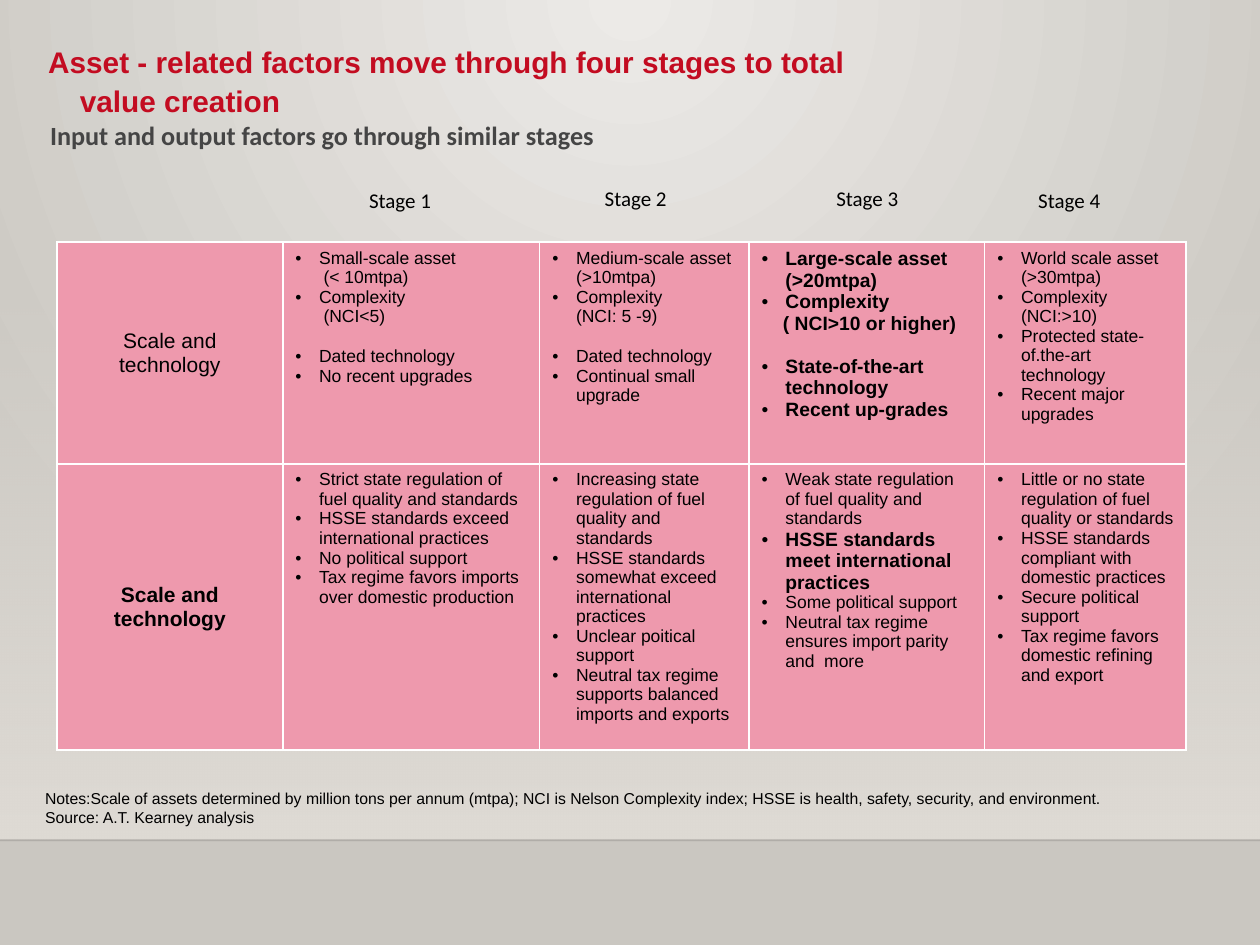
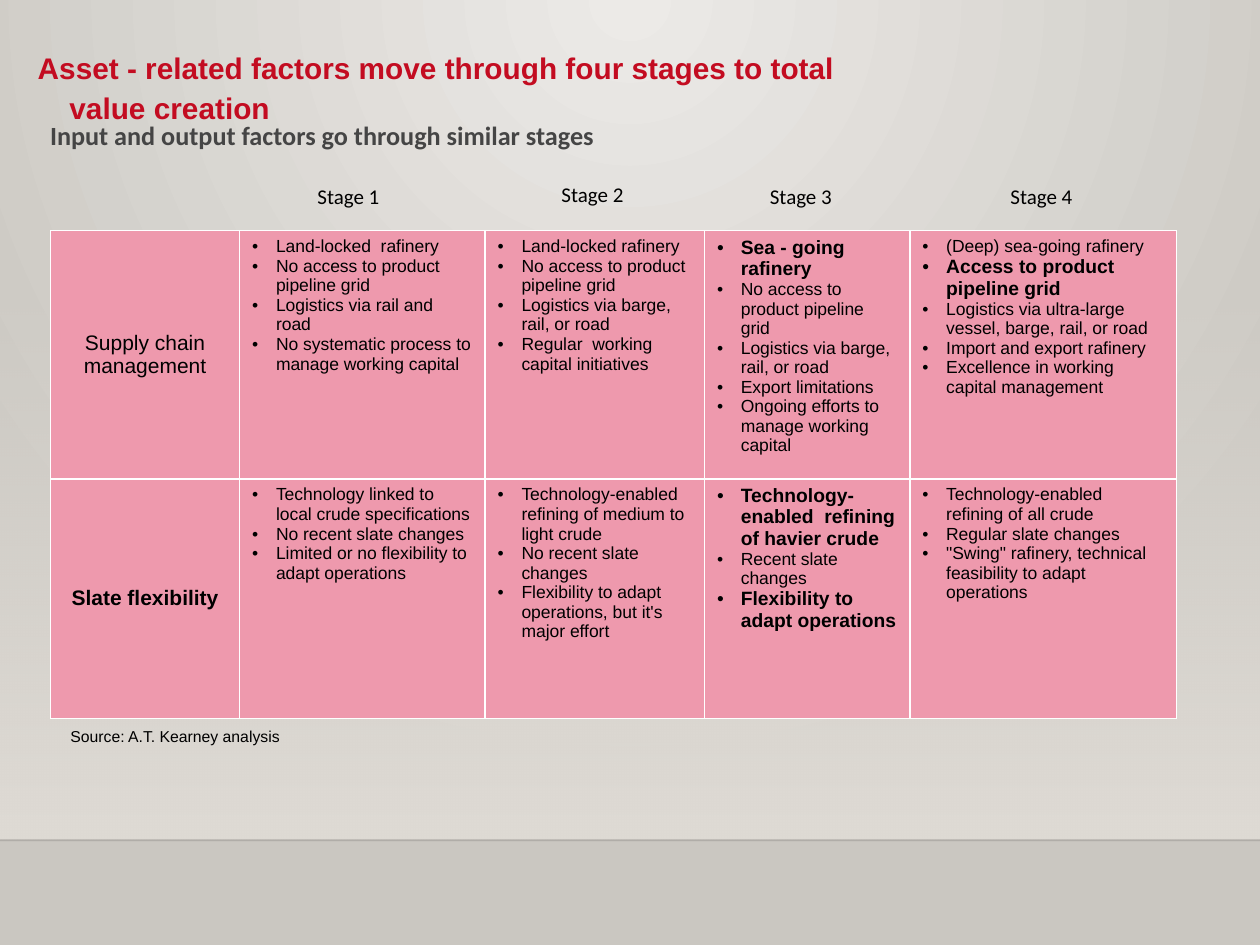
from dataclasses import dataclass

from lxml.etree import SubElement
from pptx import Presentation
from pptx.dml.color import RGBColor
from pptx.enum.shapes import MSO_CONNECTOR, MSO_SHAPE
from pptx.enum.text import MSO_ANCHOR as Anchor, MSO_AUTO_SIZE as AutoSize, PP_ALIGN as Align
from pptx.oxml.ns import qn
from pptx.util import Cm, Pt

BLACK = RGBColor(0x00, 0x00, 0x00)
WHITE = RGBColor(0xFF, 0xFF, 0xFF)
RED = RGBColor(0xC3, 0x0C, 0x21)
GREY = RGBColor(0x45, 0x45, 0x45)
PINK = RGBColor(0xEE, 0x99, 0xAD)
GLOW = RGBColor(0xEC, 0xEA, 0xE7)
EDGE = RGBColor(0xCA, 0xC7, 0xC1)
BAND = RGBColor(0xDF, 0xDB, 0xD5)

BULLET_INDENT = 0.48
FLOOR_TOP = 16.94
TITLE_ONLY_LAYOUT = 5


@dataclass
class Point:
    """A cell line; one with its own indent (cm) carries no bullet."""
    text: str
    bold: bool = False
    indent: float = 0
    gap: float = 0


def strong(text, **options):
    return Point(text, bold=True, **options)


TITLE = "Asset - related factors move through four stages to total value creation"
SUBTITLE = "Input and output factors go through similar stages"
SOURCE = "Source: A.T. Kearney analysis"

SLIDES = [
    {
        "title_box": (0.97, 0.81, 16.94, 1.57),
        "stages": [(7.19, 3.66), (11.94, 3.61), (16.61, 3.61), (20.68, 3.66)],
        "table_at": (1.15, 4.88),
        "columns": (4.55, 5.18, 4.22, 4.75, 4.06),
        "row_heights": (4.47, 5.77),
        "rows": [
            ("Scale and technology", [
                ["Small-scale asset", Point("(< 10mtpa)", indent=0.57),
                 "Complexity", Point("(NCI<5)", indent=0.57),
                 Point("Dated technology", gap=11.5), "No recent upgrades"],
                ["Medium-scale asset (>10mtpa)",
                 "Complexity", Point("(NCI: 5 -9)", indent=0.48),
                 Point("Dated technology", gap=11.5), "Continual small upgrade"],
                [strong("Large-scale asset (>20mtpa)"),
                 strong("Complexity"), strong("( NCI>10 or higher)", indent=0.43),
                 strong("State-of-the-art technology", gap=12.5),
                 strong("Recent up-grades")],
                ["World scale asset (>30mtpa)", "Complexity (NCI:>10)",
                 "Protected state-of.the-art technology", "Recent major upgrades"],
            ]),
            ("Scale and technology", [
                ["Strict state regulation of fuel quality and standards",
                 "HSSE standards exceed international practices",
                 "No political support",
                 "Tax regime favors imports over domestic production"],
                ["Increasing state regulation of fuel quality and standards",
                 "HSSE standards somewhat exceed international practices",
                 "Unclear poitical support",
                 "Neutral tax regime supports balanced imports and exports"],
                ["Weak state regulation of fuel quality and standards",
                 strong("HSSE standards meet international practices"),
                 "Some political support",
                 "Neutral tax regime ensures import parity and  more"],
                ["Little or no state regulation of fuel quality or standards",
                 "HSSE standards compliant with domestic practices",
                 "Secure political support",
                 "Tax regime favors domestic refining and export"],
            ]),
        ],
        "notes_box": (0.66, 15.77, 23.75, 1.02),
        "notes": [
            "Notes:Scale of assets determined by million tons per annum (mtpa); NCI is Nelson "
            "Complexity index; HSSE is health, safety, security, and environment.",
            SOURCE,
        ],
    },
    {
        "title_box": (0.76, 0.94, 17.15, 1.57),
        "stages": [(6.15, 3.56), (11.07, 3.53), (15.27, 3.56), (20.12, 3.56)],
        "table_at": (1.02, 4.65),
        "columns": (3.81, 4.95, 4.42, 4.14, 5.38),
        "row_heights": (4.98, 4.83),
        "rows": [
            ("Supply chain management", [
                ["Land-locked  rafinery", "No access to product pipeline grid",
                 "Logistics via rail and road",
                 "No systematic process to manage working capital"],
                ["Land-locked rafinery", "No access to product pipeline grid",
                 "Logistics via barge, rail, or road",
                 "Regular  working capital initiatives"],
                [strong("Sea - going rafinery"), "No access to product pipeline grid",
                 "Logistics via barge, rail, or road", "Export limitations",
                 "Ongoing efforts to manage working capital"],
                ["(Deep) sea-going rafinery", strong("Access to product pipeline grid"),
                 "Logistics via ultra-large vessel, barge, rail, or road",
                 "Import and export rafinery",
                 "Excellence in working capital management"],
            ]),
            ("Slate flexibility", [
                ["Technology linked to local crude specifications",
                 "No recent slate changes",
                 "Limited or no flexibility to adapt operations"],
                ["Technology-enabled refining of medium to light crude",
                 "No recent slate changes",
                 "Flexibility to adapt operations, but it's major effort"],
                [strong("Technology-enabled  refining of havier crude"),
                 "Recent slate changes",
                 strong("Flexibility to adapt operations")],
                ["Technology-enabled  refining of all crude",
                 "Regular slate changes",
                 "\"Swing\" rafinery, technical feasibility to adapt operations"],
            ]),
        ],
        "notes_box": (1.17, 14.53, 6.32, 0.64),
        "notes": [SOURCE],
    },
]


def lengths(values):
    return [Cm(value) for value in values]


def set_font(paragraph, size, color=BLACK, name="Arial", bold=False):
    for run in paragraph.runs:
        font = run.font
        font.name, font.size, font.bold = name, Pt(size), bold
        font.color.rgb = color


def set_indent(paragraph, left, hanging=0):
    properties = paragraph._p.get_or_add_pPr()
    properties.set("marL", str(Cm(left)))
    properties.set("indent", str(-Cm(hanging)))
    return properties


def set_gradient(fill, *colors):
    fill.gradient()
    for stop, color in zip(fill.gradient_stops, colors):
        stop.color.rgb = color


def set_alpha(element, percent):
    color = next(element.iter(qn("a:srgbClr")))
    SubElement(color, qn("a:alpha"), val=str(percent * 1000))


def decorate_master(presentation, slide):
    """Give the master its round glow, fading band and floor line."""
    master = presentation.slide_master
    set_gradient(master.background.fill, GLOW, EDGE)
    gradient = next(master.element.iter(qn("a:gradFill")))
    gradient.remove(gradient.find(qn("a:lin")))
    circle = SubElement(gradient, qn("a:path"), {"path": "circle"})
    SubElement(circle, qn("a:fillToRect"), l="43000", t="0", r="43000", b="100000")

    width, floor = presentation.slide_width, Cm(FLOOR_TOP)
    band_top = Cm(5.59)
    band = slide.shapes.add_shape(MSO_SHAPE.RECTANGLE, 0, band_top, width, floor - band_top)
    band.shadow.inherit = False
    band.line.fill.background()
    set_gradient(band.fill, BAND, BAND)
    band.fill.gradient_angle = 270
    set_alpha(band.element, 0)

    line = slide.shapes.add_connector(MSO_CONNECTOR.STRAIGHT, 0, floor, width, floor)
    line.line.width = Pt(1)
    line.line.color.rgb = BLACK
    set_alpha(line.element, 20)
    SubElement(line.element.spPr, qn("a:effectLst"))

    for number, shape in enumerate((band, line), start=101):
        next(shape.element.iter(qn("p:cNvPr"))).set("id", str(number))
        master.shapes.element.append(shape.element)


def add_title(slide, box):
    title = slide.shapes.title
    title.left, title.top, title.width, title.height = lengths(box)
    frame = title.text_frame
    frame.text = TITLE
    frame.auto_size, frame.vertical_anchor, frame.word_wrap = AutoSize.NONE, Anchor.TOP, True
    frame.margin_left = frame.margin_top = frame.margin_right = frame.margin_bottom = 0
    paragraph = frame.paragraphs[0]
    set_indent(paragraph, 0.64, 0.64)
    paragraph.alignment, paragraph.line_spacing = Align.LEFT, 1.1
    set_font(paragraph, 17, RED, bold=True)


def add_text(slide, box, lines, size, anchor=Anchor.MIDDLE, **font):
    frame = slide.shapes.add_textbox(*lengths(box)).text_frame
    frame.word_wrap, frame.vertical_anchor = True, anchor
    frame.auto_size = AutoSize.SHAPE_TO_FIT_TEXT
    frame.text = "\n".join(lines)
    for paragraph in frame.paragraphs:
        set_font(paragraph, size, **font)


def format_cell(cell):
    properties = cell._tc.get_or_add_tcPr()
    for side in ("lnL", "lnR", "lnT", "lnB"):
        border = SubElement(properties, qn(f"a:{side}"), w=str(Pt(1)))
        SubElement(SubElement(border, qn("a:solidFill")), qn("a:srgbClr"), val=str(WHITE))
    cell.fill.solid()
    cell.fill.fore_color.rgb = PINK


def fill_label(cell, text, bold):
    cell.text_frame.text = text
    cell.vertical_anchor = Anchor.MIDDLE
    paragraph = cell.text_frame.paragraphs[0]
    paragraph.alignment = Align.CENTER
    set_font(paragraph, 12, bold=bold)


def fill_points(cell, items):
    points = [item if isinstance(item, Point) else Point(item) for item in items]
    cell.text_frame.text = "\n".join(point.text for point in points)
    for paragraph, point in zip(cell.text_frame.paragraphs, points):
        if point.indent:
            set_indent(paragraph, point.indent)
        else:
            properties = set_indent(paragraph, BULLET_INDENT, BULLET_INDENT)
            SubElement(properties, qn("a:buFont"), typeface="Arial")
            SubElement(properties, qn("a:buChar"), char="•")
        if point.gap:
            paragraph.space_before = Pt(point.gap)
        set_font(paragraph, 11 if point.bold else 10, bold=point.bold)


def add_stage_table(slide, content):
    columns, heights = content["columns"], content["row_heights"]
    box = (*content["table_at"], sum(columns), sum(heights))
    table = slide.shapes.add_table(len(heights), len(columns), *lengths(box)).table
    table.first_row = table.horz_banding = False
    for column, width in zip(table.columns, columns):
        column.width = Cm(width)
    for index, (row, height) in enumerate(zip(table.rows, heights)):
        row.height = Cm(height)
        label, stages = content["rows"][index]
        label_cell, *stage_cells = row.cells
        fill_label(label_cell, label, bold=index > 0)
        for cell, items in zip(stage_cells, stages):
            fill_points(cell, items)
        for cell in row.cells:
            format_cell(cell)


def main():
    presentation = Presentation()
    presentation.slide_width, presentation.slide_height = Cm(25.4), Cm(19.05)
    layout = presentation.slide_layouts[TITLE_ONLY_LAYOUT]
    for content in SLIDES:
        slide = presentation.slides.add_slide(layout)
        add_title(slide, content["title_box"])
        add_text(slide, (0.76, 2.29, 17.53, 0.89), [SUBTITLE], 15, Anchor.TOP,
                 color=GREY, name="Calibri", bold=True)
        add_stage_table(slide, content)
        for number, position in enumerate(content["stages"], start=1):
            add_text(slide, (*position, 2.34, 0.77), [f"Stage {number}"], 12, name="Calibri")
        add_text(slide, content["notes_box"], content["notes"], 9)
    decorate_master(presentation, presentation.slides[0])
    presentation.save("out.pptx")


if __name__ == "__main__":
    main()
